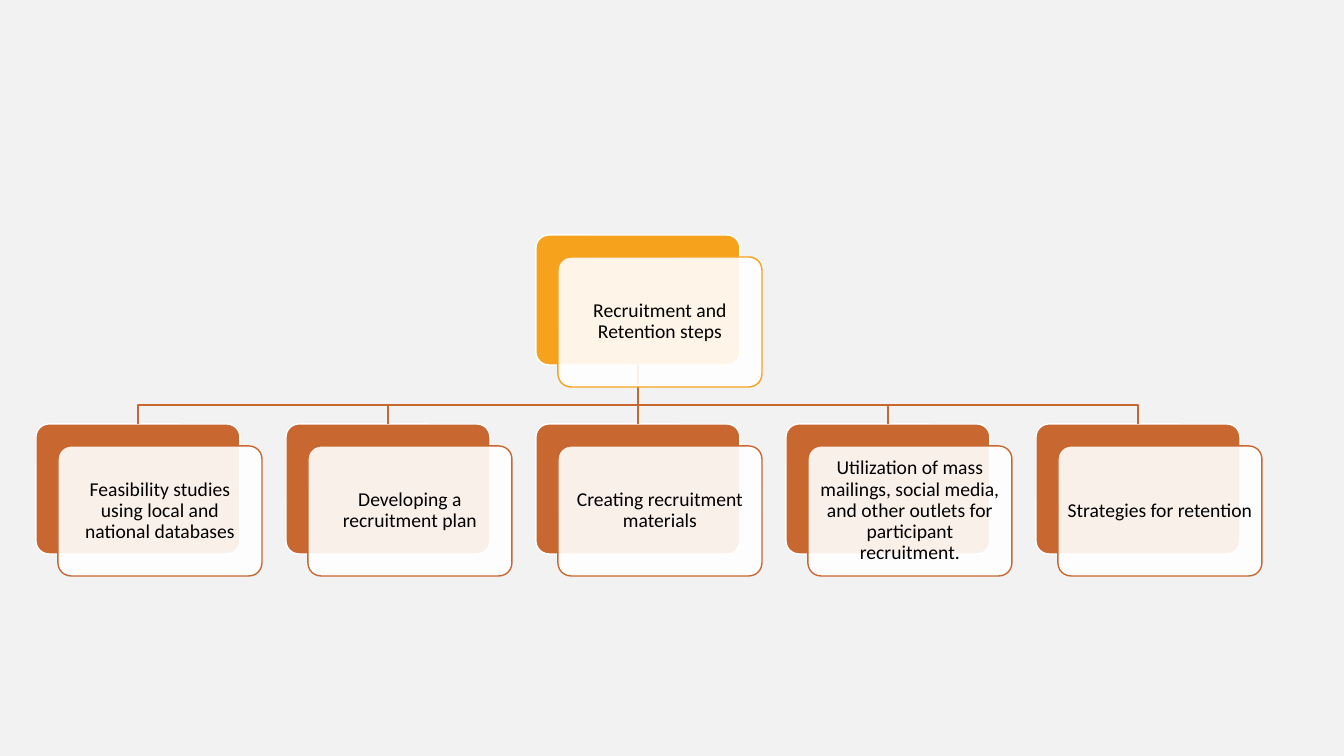
import pptx
import pptx.util
import pptx.dml.color
import pptx.enum.shapes
import pptx.enum.text
import pptx.oxml
import pptx.oxml.ns
from lxml import etree

# Content
ROOT_STEP = "Recruitment and Retention steps"
STEPS = [
    "Feasibility studies using local and national databases",
    "Developing a recruitment plan",
    "Creating recruitment materials",
    "Utilization of mass mailings, social media, and other outlets for participant recruitment.",
    "Strategies for retention",
]
COLORS = {"page": "F2F2F2", "root": "F6A21D", "step": "C96731",
          "white": "FFFFFF", "text": "000000"}

# Layout in px
PX = 12192000 / 1344
PAGE_W, PAGE_H = 1344, 756
CARD_W, CARD_H = 204, 130
FIRST_LEFT, PITCH = 36, 250
ROOT_TOP, STEP_TOP, BAR_Y = 235, 424, 405
OFFSET = 22
INSET = 5
MIDDLE = len(STEPS) // 2


def emu(px):
    return pptx.util.Emu(round(px * PX))


def rgb(name):
    return pptx.dml.color.RGBColor.from_string(COLORS[name])


def add_card(page, left, top, fill, line):
    card = page.shapes.add_shape(
        pptx.enum.shapes.MSO_SHAPE.ROUNDED_RECTANGLE,
        emu(left), emu(top), emu(CARD_W), emu(CARD_H))
    card.adjustments[0] = 0.1
    card.shadow.inherit = False
    card.fill.solid()
    card.fill.fore_color.rgb = rgb(fill)
    card.line.color.rgb = rgb(line)
    card.line.width = pptx.util.Pt(1)
    return card


def add_label_card(page, left, top, color, text):
    card = add_card(page, left + OFFSET, top + OFFSET, "white", color)
    # 90% opaque fill
    tint = card.fill._xPr.find(".//" + pptx.oxml.ns.qn("a:srgbClr"))
    etree.SubElement(tint, pptx.oxml.ns.qn("a:alpha"), val="90000")
    frame = card.text_frame
    frame.word_wrap = True
    frame.vertical_anchor = pptx.enum.text.MSO_ANCHOR.MIDDLE
    frame.margin_left = frame.margin_right = emu(INSET)
    frame.margin_top = frame.margin_bottom = emu(INSET)
    para = frame.paragraphs[0]
    para.text = text
    para.alignment = pptx.enum.text.PP_ALIGN.CENTER
    para.line_spacing = 0.9
    para.font.name = "Calibri"
    para.font.size = pptx.util.Pt(14)
    para.font.color.rgb = rgb("text")


def style_link(link):
    link.line.color.rgb = rgb("step")
    link.line.width = pptx.util.Pt(1)


def main():
    deck = pptx.Presentation()
    deck.slide_width, deck.slide_height = emu(PAGE_W), emu(PAGE_H)
    page = deck.slides.add_slide(deck.slide_layouts[6])
    page.background.fill.solid()
    page.background.fill.fore_color.rgb = rgb("page")

    # Cards: left, top, colour, text
    lefts = [FIRST_LEFT + PITCH * i for i in range(len(STEPS))]
    root_left = lefts[MIDDLE]
    cards = [(root_left, ROOT_TOP, "root", ROOT_STEP)]
    cards += [(left, STEP_TOP, "step", text) for left, text in zip(lefts, STEPS)]

    # Coloured cards at the back
    root, *steps = [add_card(page, left, top, color, "white")
                    for left, top, color, text in cards]

    # Links from the root to each step
    root_x = root_left + CARD_W // 2
    for i, (left, step) in enumerate(zip(lefts, steps)):
        if i == MIDDLE:
            link = page.shapes.add_connector(
                pptx.enum.shapes.MSO_CONNECTOR.STRAIGHT, 0, 0, 0, 0)
            link.begin_connect(root, 2)
            link.end_connect(step, 0)
            etree.SubElement(link._element.spPr, pptx.oxml.ns.qn("a:effectLst"))
            style_link(link)
        else:
            step_x = left + CARD_W // 2
            path = page.shapes.build_freeform(root_x, ROOT_TOP + CARD_H, scale=PX)
            path.add_line_segments(
                [(root_x, BAR_Y), (step_x, BAR_Y), (step_x, STEP_TOP)], close=False)
            link = path.convert_to_shape()
            link.fill.background()
            link.shadow.inherit = False
            style_link(link)

    # Translucent label cards in front
    for left, top, color, text in cards:
        add_label_card(page, left, top, color, text)

    deck.save("out.pptx")


if __name__ == "__main__":
    main()
